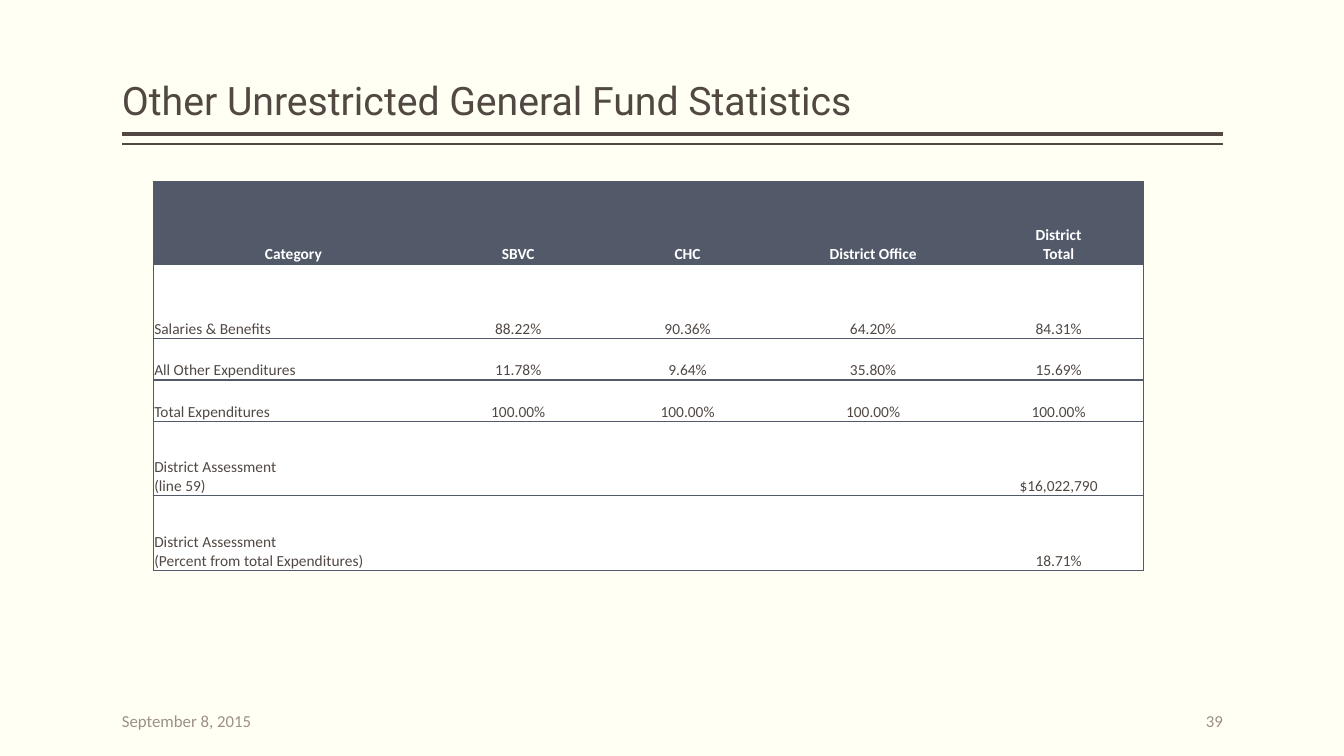
from pptx import Presentation
from pptx import util as u
from pptx.dml.color import RGBColor
from pptx.enum import shapes, text
from pptx.oxml.ns import qn
from lxml import etree

HUES = {"page": "FFFFF3", "ink": "514843", "mute": "9D8F88",
        "slate": "525A6A", "white": "FFFFFF"}
LEFT, RIGHT = 1.21, 12.13
COLS = [2.78, 1.68, 1.68, 2, 1.68]
TALL = [0.82, 0.74, 0.41, 0.41, 0.74, 0.74]
ROWS = [
    ["Category", "SBVC", "CHC", "District Office", "District\vTotal"],
    ["Salaries & Benefits", "88.22%", "90.36%", "64.20%", "84.31%"],
    ["All Other Expenditures", "11.78%", "9.64%", "35.80%", "15.69%"],
    ["Total Expenditures"] + ["100.00%"] * 4,
    ["District Assessment\n(line 59)", "", "", "", "$16,022,790"],
    ["District Assessment\n(Percent from total Expenditures)", "", "", "", "18.71%"],
]


def hue(name):
    """Return the named colour."""
    return RGBColor.from_string(HUES[name])


def write(frame, words, size, tint, face="Calibri", bold=False, align="LEFT", lead=None):
    """Fill a text frame; newlines part paragraphs, vertical tabs part lines."""
    for i, line in enumerate(words.split("\n")):
        para = frame.add_paragraph() if i else frame.paragraphs[0]
        para.alignment = getattr(text.PP_ALIGN, align)
        if lead:
            para.line_spacing = lead
        for j, part in enumerate(line.split("\v")):
            if j:
                para.add_line_break()
            run = para.add_run()
            run.text = part
            font = run.font
            font.name, font.size, font.bold = face, u.Pt(size), bold
            font.color.rgb = hue(tint)


def label(slide, box, words, size, tint, anchor="MIDDLE", **style):
    """Add a text box without side margins."""
    frame = slide.shapes.add_textbox(*map(u.Inches, box)).text_frame
    frame.word_wrap = True
    frame.margin_left = frame.margin_right = 0
    frame.vertical_anchor = getattr(text.MSO_ANCHOR, anchor)
    write(frame, words, size, tint, **style)


def rule(slide, y, width):
    """Draw a line across the content width."""
    line = slide.shapes.add_connector(
        shapes.MSO_CONNECTOR.STRAIGHT,
        *map(u.Inches, (RIGHT, y, LEFT, y)))
    line.line.color.rgb = hue("ink")
    line.line.width = u.Pt(width)
    etree.SubElement(line._element.spPr, qn("a:effectLst"))


def edge(cell, side, shown):
    """Set one cell border, either slate or none."""
    props = cell._tc.get_or_add_tcPr()
    line = etree.SubElement(props, qn("a:ln" + side), w=str(u.Pt(1)))
    if shown:
        fill = etree.SubElement(line, qn("a:solidFill"))
        etree.SubElement(fill, qn("a:srgbClr"), val=HUES["slate"])
    else:
        etree.SubElement(line, qn("a:noFill"))


def grid(slide):
    """Add the table of fund statistics."""
    box = (1.52, 1.8, sum(COLS), sum(TALL))
    table = slide.shapes.add_table(
        len(ROWS), len(COLS), *map(u.Inches, box)).table
    table.first_row = table.horz_banding = False
    for col, width in zip(table.columns, COLS):
        col.width = u.Inches(width)
    for r, (row, height) in enumerate(zip(ROWS, TALL)):
        table.rows[r].height = u.Inches(height)
        head = r == 0
        for c, words in enumerate(row):
            cell = table.cell(r, c)
            cell.margin_left = cell.margin_right = cell.margin_top = u.Inches(0.01)
            cell.margin_bottom = 0
            cell.vertical_anchor = text.MSO_ANCHOR.BOTTOM
            sides = {"L": c == 0, "R": c == len(row) - 1, "T": True, "B": True}
            for side, shown in sides.items():
                edge(cell, side, shown)
            cell.fill.solid()
            cell.fill.fore_color.rgb = hue("slate" if head else "white")
            if words:
                write(cell.text_frame, words, 11, "white" if head else "ink",
                      bold=head, align="CENTER" if head or c else "LEFT")


def main():
    """Build and save the slide."""
    deck = Presentation()
    deck.slide_width, deck.slide_height = u.Inches(13.33), u.Inches(7.5)
    slide = deck.slides.add_slide(deck.slide_layouts[6])
    slide.background.fill.solid()
    slide.background.fill.fore_color.rgb = hue("page")
    rule(slide, 1.33, 3)
    rule(slide, 1.43, 1)
    label(slide, (LEFT, 0.08, RIGHT - LEFT, 1.2),
          "Other Unrestricted General Fund Statistics", 28, "ink",
          anchor="BOTTOM", face="Roboto", lead=0.9)
    label(slide, (LEFT, 6.95, 2, 0.4), "September 8, 2015", 12, "mute")
    label(slide, (RIGHT - 2, 6.95, 2, 0.4), "39", 12, "mute", align="RIGHT")
    grid(slide)
    deck.save("out.pptx")


if __name__ == "__main__":
    main()
